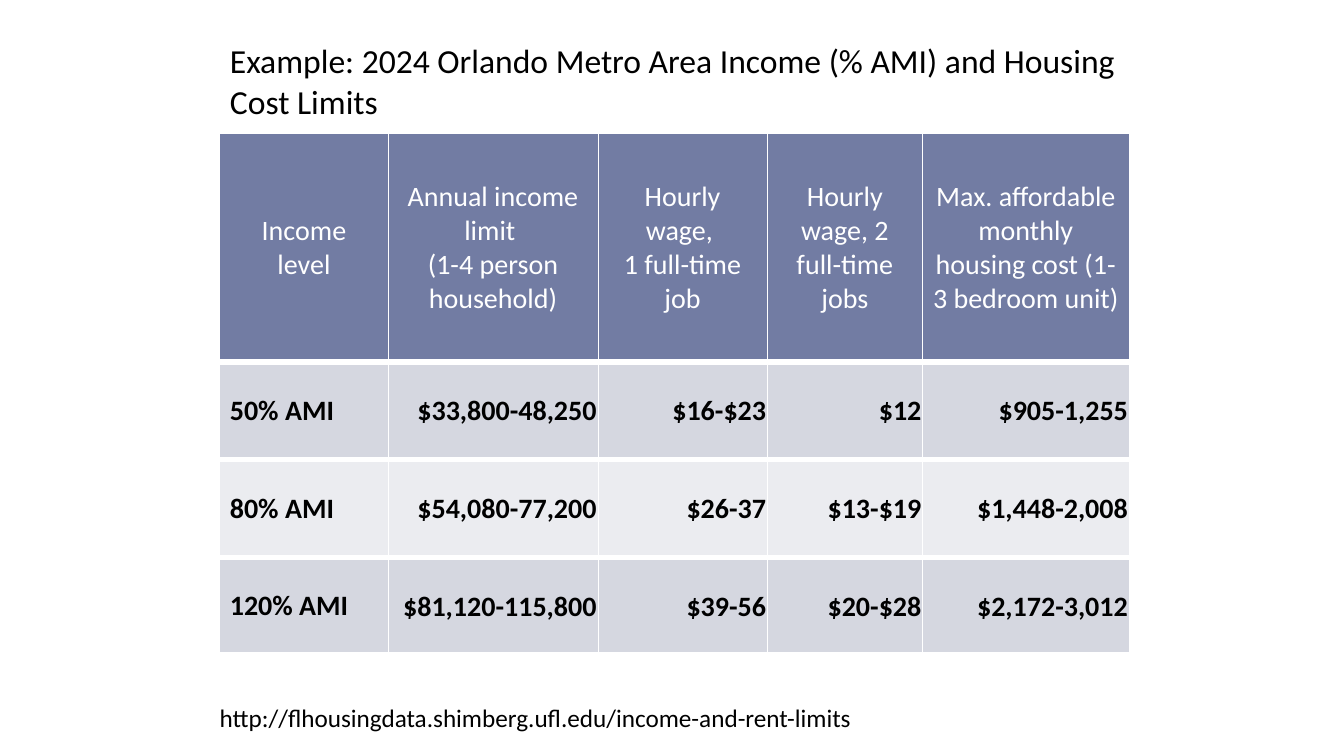
from lxml.etree import SubElement
from pptx import Presentation
from pptx.dml.color import RGBColor
from pptx.enum.text import MSO_ANCHOR, MSO_AUTO_SIZE, PP_ALIGN
from pptx.oxml.ns import qn
from pptx.util import Inches, Pt

FONT = "Calibri"
COLORS = {"header": "727CA3", "odd": "D5D7E0", "even": "EBECF0",
          "white": "FFFFFF", "black": "000000"}
LEFT, WIDTH = 2.18, 9.03
COLUMNS = [1.67, 2.08, 1.68, 1.54, 2.05]
ROWS = [2.26, 0.97, 0.97, 0.97]
THIN, THICK = 0.5, 4.5
# Each cell is a list of paragraphs; "\n" is a line break within one.
HEADER = [["Income level"],
          ["Annual income limit \n(1-4 person household)"],
          ["Hourly wage, ", "1 full-time job"],
          ["Hourly wage, 2 full-time jobs"],
          ["Max. affordable monthly housing cost (1-3 bedroom unit)"]]
LIMITS = [["50% AMI", "$33,800-48,250", "$16-$23", "$12", "$905-1,255"],
          ["80% AMI", "$54,080-77,200", "$26-37", "$13-$19", "$1,448-2,008"],
          ["120% AMI", "$81,120-115,800", "$39-56", "$20-$28", "$2,172-3,012"]]


def rgb(name):
    return RGBColor.from_string(COLORS[name])


def write(tf, paragraphs, size, color="black", bold=False, align=PP_ALIGN.LEFT):
    tf.word_wrap = True
    for i, text in enumerate(paragraphs):
        p = tf.paragraphs[0] if i == 0 else tf.add_paragraph()
        p.alignment = align
        for j, line in enumerate(text.split("\n")):
            if j:
                p.add_line_break()
            r = p.add_run()
            r.text = line
            r.font.name, r.font.size, r.font.bold = FONT, Pt(size), bold
            r.font.color.rgb = rgb(color)


def add_borders(cell, widths):
    """Draw white cell edges; widths maps L, R, T, B to points, 0 for none."""
    tcPr = cell._tc.get_or_add_tcPr()
    for side, width in widths.items():
        ln = SubElement(tcPr, qn(f"a:ln{side}"), w=str(Pt(width)))
        if width:
            fill = SubElement(ln, qn("a:solidFill"))
            SubElement(fill, qn("a:srgbClr"), val=COLORS["white"])
        else:
            SubElement(ln, qn("a:noFill"))


def set_margins(cell, side, bottom):
    cell.margin_left = cell.margin_right = cell.margin_top = Inches(side)
    cell.margin_bottom = Inches(bottom)


def add_title(s, left, top, width, height):
    sp = s.shapes.title
    sp.left, sp.top, sp.width, sp.height = map(Inches, (left, top, width, height))
    tf = sp.text_frame
    tf.auto_size = MSO_AUTO_SIZE.NONE
    tf.vertical_anchor = MSO_ANCHOR.BOTTOM
    write(tf, ["Example: 2024 Orlando Metro Area Income (% AMI) and Housing Cost Limits"], 24)


def add_limits_table(s, left, top, width):
    table = s.shapes.add_table(len(ROWS), len(COLUMNS), Inches(left), Inches(top),
                               Inches(width), Inches(sum(ROWS))).table
    for column, w in zip(table.columns, COLUMNS):
        column.width = Inches(w)
    for row, h in zip(table.rows, ROWS):
        row.height = Inches(h)
    contents = [HEADER] + [[[text] for text in row] for row in LIMITS]
    for i, row in enumerate(contents):
        for j, paragraphs in enumerate(row):
            cell = table.cell(i, j)
            add_borders(cell, {"L": THIN if j else 0,
                               "R": THIN if j < len(COLUMNS) - 1 else 0,
                               "T": THICK if i else 0, "B": THICK})
            cell.fill.solid()
            cell.fill.fore_color.rgb = rgb("header" if i == 0 else "odd" if i % 2 else "even")
            cell.vertical_anchor = MSO_ANCHOR.MIDDLE
            if i == 0:
                if j == 0:
                    set_margins(cell, 0.15, 0.15)
                write(cell.text_frame, paragraphs, 20, "white", align=PP_ALIGN.CENTER)
            elif j == 0:
                write(cell.text_frame, paragraphs, 20, bold=True)
            else:
                set_margins(cell, 0.01, 0)
                write(cell.text_frame, paragraphs, 20, bold=True, align=PP_ALIGN.RIGHT)


def add_source(s, left, top, width, height):
    tf = s.shapes.add_textbox(*map(Inches, (left, top, width, height))).text_frame
    tf.auto_size = MSO_AUTO_SIZE.SHAPE_TO_FIT_TEXT
    write(tf, ["http://flhousingdata.shimberg.ufl.edu/income-and-rent-limits"], 18)
    tf.paragraphs[0].space_after = Pt(6)


def main():
    prs = Presentation()
    prs.slide_width, prs.slide_height = Inches(13.33), Inches(7.5)
    s = prs.slides.add_slide(prs.slide_layouts[5])
    add_title(s, LEFT, 0.42, WIDTH, 0.83)
    add_source(s, LEFT - 0.1, 6.92, 9.41, 0.4)
    add_limits_table(s, LEFT, 1.33, WIDTH)
    prs.save("out.pptx")


if __name__ == "__main__":
    main()
